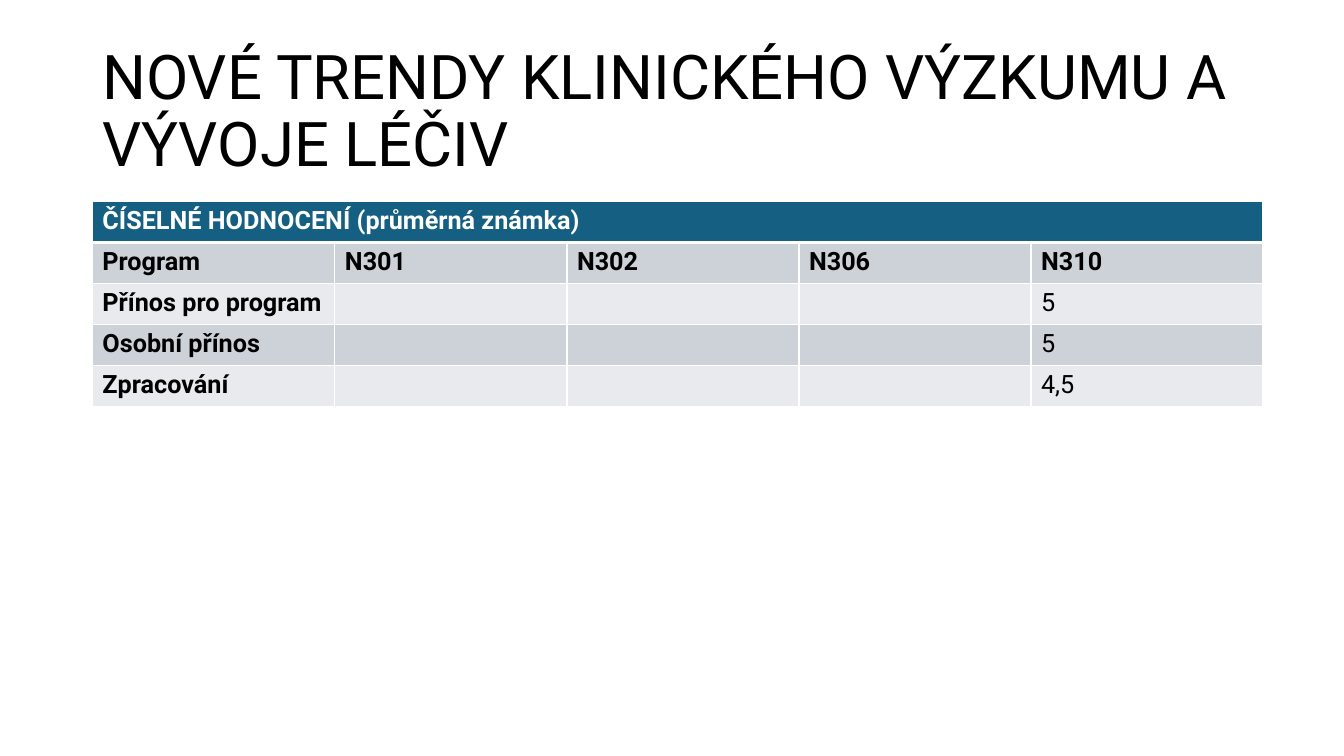
from pptx import Presentation
from pptx.dml.color import RGBColor as RGB
from pptx.enum.text import MSO_ANCHOR as Anchor
from pptx.oxml import parse_xml as to_xml
from pptx.oxml.ns import nsdecls as names
from pptx.util import Pt

SCALE = 9525


def px(n):
    return n * SCALE


def color(code):
    return RGB.from_string(code)


class Deck:
    font = "Roboto"
    ink = "000000"
    paper = "FFFFFF"
    head = "156082"
    bands = ("CCD2D8", "E8EAED")

    def __init__(self, width, height):
        self.show = Presentation()
        self.show.slide_width = px(width)
        self.show.slide_height = px(height)
        self.slide = self.show.slides.add_slide(self.show.slide_layouts[6])

    def run(self, par, text, size, ink, bold=False):
        run = par.add_run()
        run.text = text
        run.font.name = self.font
        run.font.size = Pt(size)
        run.font.bold = bold
        run.font.color.rgb = color(ink)

    def title(self, box, text, size):
        frame = self.slide.shapes.add_textbox(*map(px, box)).text_frame
        frame.word_wrap = True
        frame.vertical_anchor = Anchor.MIDDLE
        par = frame.paragraphs[0]
        par.line_spacing = 0.9
        self.run(par, text, size, self.ink)

    def border(self, cell, side, width):
        cell._tc.get_or_add_tcPr().append(to_xml(
            f'<a:{side} {names("a")} w="{Pt(width)}"><a:solidFill>'
            f'<a:srgbClr val="{self.paper}"/></a:solidFill></a:{side}>'))

    def cell(self, cell, text, fill, ink, bold, top, bottom):
        for side, width in (("lnL", 1), ("lnR", 1), ("lnT", top), ("lnB", bottom)):
            self.border(cell, side, width)
        cell.fill.solid()
        cell.fill.fore_color.rgb = color(fill)
        if text:
            self.run(cell.text_frame.paragraphs[0], text, 18, ink, bold)

    def table(self, left, top, cols, high, rows):
        box = (left, top, sum(cols), high * len(rows))
        grid = self.slide.shapes.add_table(len(rows), len(cols), *map(px, box)).table
        for col, width in zip(grid.columns, cols):
            col.width = px(width)
        for r, row in enumerate(rows):
            grid.rows[r].height = px(high)
            fill = self.bands[(r - 1) % 2] if r else self.head
            ink = self.ink if r else self.paper
            for c, text in enumerate(row):
                self.cell(grid.cell(r, c), text, fill, ink, r < 2 or c == 0,
                          3 if r == 1 else 1, 1 if r else 3)
        grid.cell(0, 0).merge(grid.cell(0, len(cols) - 1))


def main():
    deck = Deck(1280, 720)
    deck.title((88, 38, 1104, 139),
               "NOVÉ TRENDY KLINICKÉHO VÝZKUMU A VÝVOJE LÉČIV", 44)
    deck.table(88, 192, [231] + [221] * 4, 39, [
        ["ČÍSELNÉ HODNOCENÍ (průměrná známka)", "", "", "", ""],
        ["Program", "N301", "N302", "N306", "N310"],
        ["Přínos pro program", "", "", "", "5"],
        ["Osobní přínos", "", "", "", "5"],
        ["Zpracování", "", "", "", "4,5"],
    ])
    deck.show.save("out.pptx")


if __name__ == "__main__":
    main()
